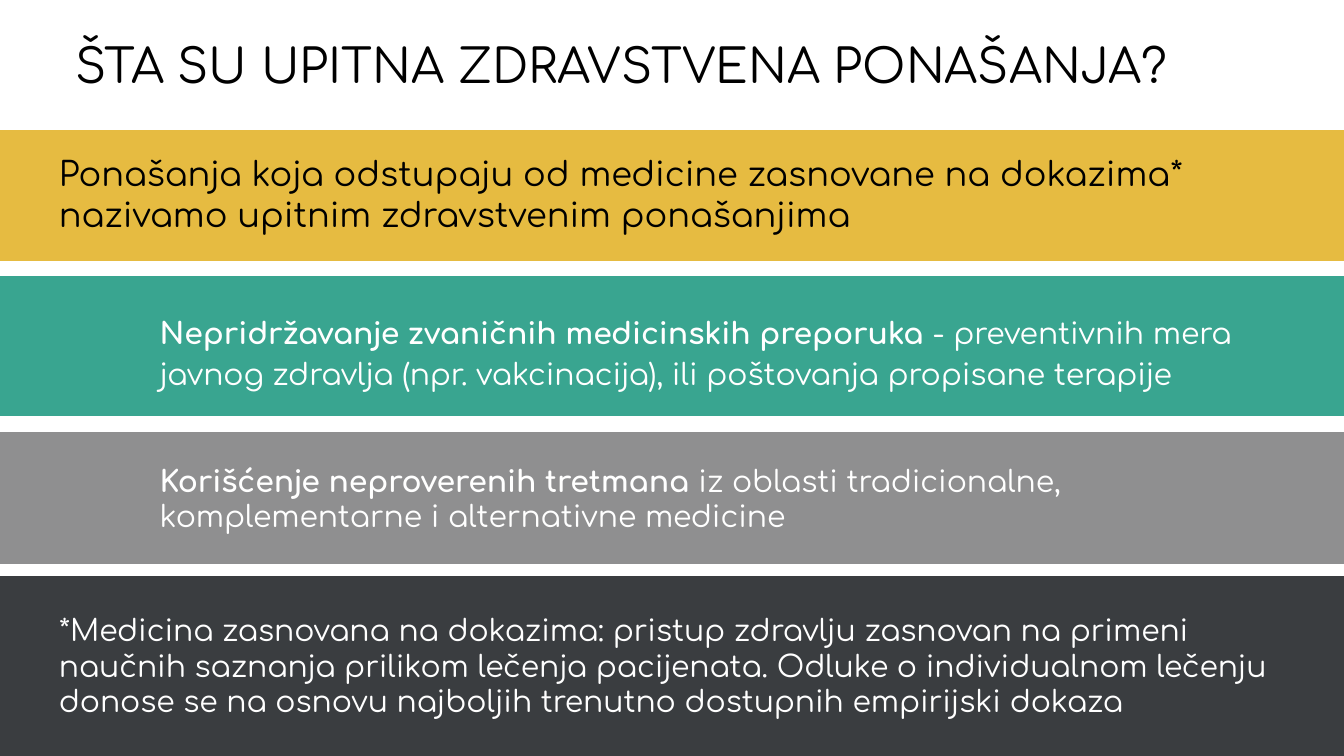
from pptx import Presentation
from pptx.dml.color import RGBColor
from pptx.enum.shapes import MSO_SHAPE
from pptx.enum.text import MSO_ANCHOR
from pptx.util import Inches, Pt

WIDTH = 10
HEIGHT = WIDTH * 9 / 16
FONT = "Comfortaa"
BLACK, WHITE = "000000", "FFFFFF"
OUTER, INNER = 0.34, 1.09  # left edges of main and indented text

TITLE = "ŠTA SU UPITNA ZDRAVSTVENA PONAŠANJA?"

# Each text is a list of (words, bold) parts.
BANDS = [
    dict(top=0.97, height=0.97, fill="E6BB41",
         text_area=(OUTER, 1.04, 9.43, 0.81),
         parts=[("Ponašanja koja odstupaju od medicine zasnovane na dokazima* "
                 "nazivamo upitnim zdravstvenim ponašanjima", False)],
         style=dict(size=18, color=BLACK)),
    dict(top=2.06, height=1.03, fill="39A590",
         text_area=(INNER, 2.2, 8.55, 0.78),
         parts=[("Nepridržavanje zvaničnih medicinskih preporuka ", True),
                ("- preventivnih mera javnog zdravlja (npr. vakcinacija), "
                 "ili poštovanja propisane terapije", False)],
         style=dict(line_spacing=1.15, space_after=10)),
    dict(top=3.22, height=0.97, fill="8F8F90",
         text_area=(INNER, 3.34, 7.89, 0.74),
         parts=[("Korišćenje neproverenih tretmana", True),
                (" iz oblasti tradicionalne, komplementarne i alternativne "
                 "medicine", False)],
         style={}),
    dict(top=4.29, height=HEIGHT - 4.29, fill="3A3D40",
         text_area=(OUTER, 4.45, 9.43, 1.01),
         parts=[("*Medicina zasnovana na dokazima: pristup zdravlju zasnovan na "
                 "primeni naučnih saznanja prilikom lečenja pacijenata. Odluke o "
                 "individualnom lečenju donose se na osnovu najboljih trenutno "
                 "dostupnih empirijski dokaza", False)],
         style={}),
]


def rgb(value):
    return RGBColor.from_string(value)


def add_text(slide, parts, area, size=16, color=WHITE, anchor=MSO_ANCHOR.TOP,
             line_spacing=None, space_after=None):
    """Write the parts in a box; area is left, top, width, height."""
    frame = slide.shapes.add_textbox(*map(Inches, area)).text_frame
    frame.word_wrap = True
    frame.vertical_anchor = anchor
    frame.margin_left = frame.margin_right = Inches(0.1)
    frame.margin_top = frame.margin_bottom = Inches(0.1)
    paragraph = frame.paragraphs[0]
    if line_spacing:
        paragraph.line_spacing = line_spacing
    if space_after:
        paragraph.space_after = Pt(space_after)
    for words, bold in parts:
        run = paragraph.add_run()
        run.text = words
        run.font.name = FONT
        run.font.size = Pt(size)
        run.font.bold = bold
        run.font.color.rgb = rgb(color)


def add_band(slide, band):
    """Draw a full-width stripe and the text on it."""
    stripe = slide.shapes.add_shape(
        MSO_SHAPE.RECTANGLE, 0, Inches(band["top"]),
        Inches(WIDTH), Inches(band["height"]))
    stripe.shadow.inherit = False
    stripe.fill.solid()
    stripe.fill.fore_color.rgb = rgb(band["fill"])
    stripe.line.color.rgb = rgb(band["fill"])
    stripe.line.width = Pt(0.75)
    add_text(slide, band["parts"], band["text_area"], **band["style"])


def main():
    deck = Presentation()
    deck.slide_width, deck.slide_height = Inches(WIDTH), Inches(HEIGHT)
    slide = deck.slides.add_slide(deck.slide_layouts[6])
    add_text(slide, [(TITLE, False)], (0.46, 0.17, 9.32, 0.63),
             size=25.2, color=BLACK, anchor=MSO_ANCHOR.MIDDLE)
    for band in BANDS:
        add_band(slide, band)
    deck.save("out.pptx")


if __name__ == "__main__":
    main()
